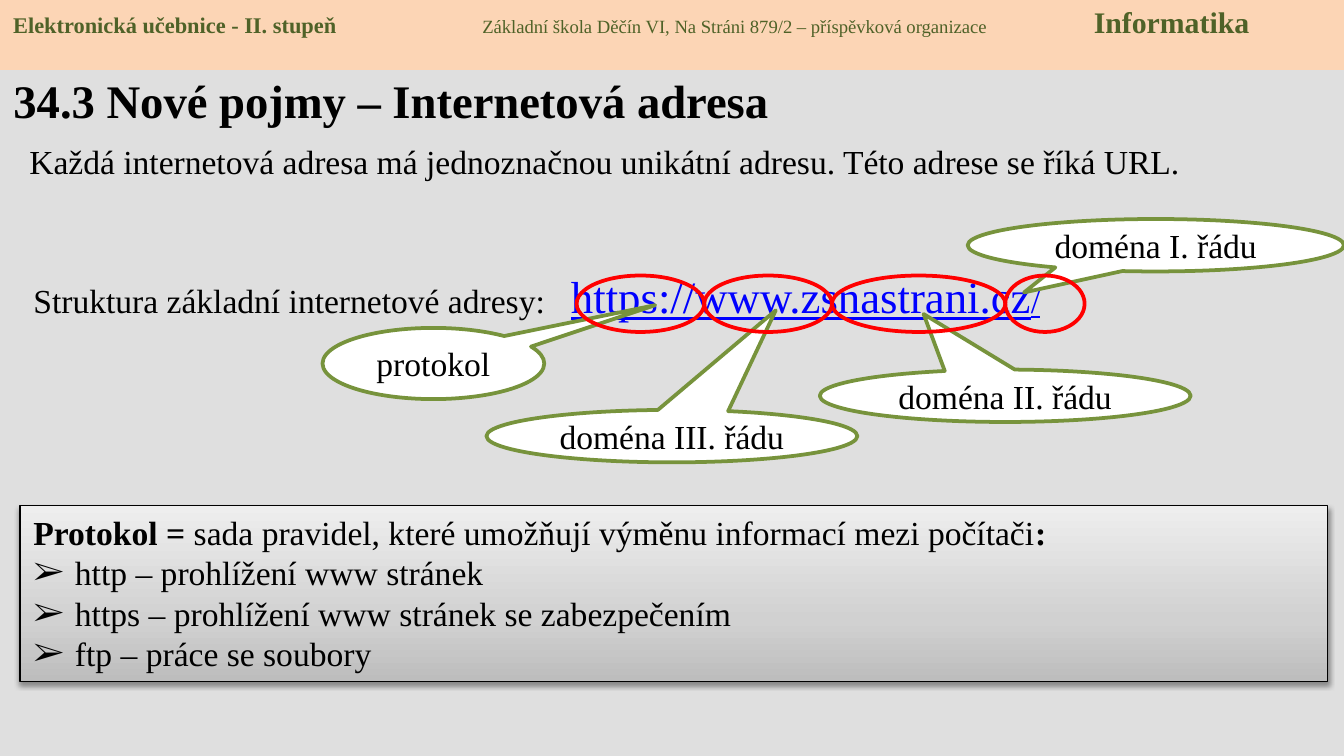
from itertools import accumulate

from lxml.etree import SubElement
from pptx import Presentation
from pptx.dml.color import RGBColor
from pptx.enum.shapes import MSO_SHAPE as Shape
from pptx.enum.text import MSO_ANCHOR as Anchor, MSO_AUTO_SIZE as AutoSize, PP_ALIGN as Align
from pptx.oxml.ns import qn
from pptx.util import Emu, Inches, Pt

FONT = "Times New Roman"
BLACK, WHITE = RGBColor(0, 0, 0), RGBColor(255, 255, 255)
GREY = RGBColor(0xDF, 0xDF, 0xDF)
PEACH = RGBColor(0xFC, 0xD5, 0xB5)
DARK_GREEN = RGBColor(0x4F, 0x62, 0x28)
GREEN = RGBColor(0x77, 0x93, 0x3C)
RED = RGBColor(255, 0, 0)
BLUE = RGBColor(0, 0, 255)
GRADIENT = [(0, RGBColor(0xBD, 0xBD, 0xBD)), (35, RGBColor(0xD1, 0xD1, 0xD1)),
            (100, RGBColor(0xEE, 0xEE, 0xEE))]

# Content: spans are (text, size, bold, colour, underline)
HEADER = [("Elektronická učebnice - II. stupeň\t", 12, True, DARK_GREEN, False),
          ("Základní škola Děčín VI, Na Stráni 879/2 – příspěvková organizace\t",
           10, False, DARK_GREEN, False),
          ("Informatika", 16, True, DARK_GREEN, False)]
TITLE = [("34.3 Nové pojmy – Internetová adresa", 25, True, BLACK, False)]
INTRO = [("Každá internetová adresa má jednoznačnou unikátní adresu. "
          "Této adrese se říká URL.", 18, False, BLACK, False)]
ADDRESS = [("Struktura základní internetové adresy:\t", 18, False, BLACK, False),
           ("https://www.zsnastrani.cz", 24, False, BLUE, True),
           ("/", 18, False, BLUE, True)]
DEFINITION = [("Protokol = ", 18, True, BLACK, False),
              ("sada pravidel, které umožňují výměnu informací mezi počítači",
               18, False, BLACK, False),
              (":", 18, True, BLACK, False)]
PROTOCOLS = ["http – prohlížení www stránek",
             "https – prohlížení www stránek se zabezpečením",
             "ftp – práce se soubory"]
# Callouts: label, (left, top, width, height), pointer offset as shares of the size
CALLOUTS = [("protokol", (2.4, 2.44, 1.65, 0.53), (1, -0.82)),
            ("doména II. řádu", (6.1, 2.75, 2.76, 0.39), (-0.22, -1.56)),
            ("doména III. řádu", (3.62, 3.05, 2.76, 0.39), (0.28, -2.4)),
            ("doména I. řádu", (7.2, 1.63, 2.8, 0.39), (-0.35, 0.9))]
RING_LEFT, RING_TOP, RING_HEIGHT = 4.29, 2.05, 0.42
RING_WIDTHS = [0.95, 0.95, 1.29, 0.59]

deck = Presentation()
deck.slide_width = Inches(10)
deck.slide_height = deck.slide_width * 9 // 16
slide = deck.slides.add_slide(deck.slide_layouts[5])
slide.background.fill.solid()
slide.background.fill.fore_color.rgb = GREY


def write(para, spans):
    para.font.name = FONT
    for text, size, bold, color, underline in spans:
        span = para.add_run()
        span.text = text
        font = span.font
        font.name, font.size, font.bold = FONT, Pt(size), bold
        font.color.rgb = color
        if underline:
            font.underline = True


def set_tabs(para, stops):
    tabs = SubElement(para._p.get_or_add_pPr(), qn("a:tabLst"))
    for stop in stops:
        SubElement(tabs, qn("a:tab"), pos=str(Inches(stop)), algn="l")


def add_shape(kind, place, fill=None, line=None, width=2):
    shape = slide.shapes.add_shape(kind, *map(Inches, place))
    shape.shadow.inherit = False
    if fill is None:
        shape.fill.background()
    else:
        shape.fill.solid()
        shape.fill.fore_color.rgb = fill
    if line is None:
        shape.line.fill.background()
    else:
        shape.line.color.rgb = line
        shape.line.width = Pt(width)
    return shape


def first_para(shape, anchor=Anchor.TOP, align=Align.LEFT):
    frame = shape.text_frame
    frame.word_wrap = True
    frame.auto_size = AutoSize.NONE
    frame.vertical_anchor = anchor
    para = frame.paragraphs[0]
    para.alignment = align
    return para


def add_text(place, spans, stops=()):
    para = first_para(slide.shapes.add_textbox(*map(Inches, place)))
    if stops:
        set_tabs(para, stops)
    write(para, spans)


# Header band
band = add_shape(Shape.RECTANGLE, (0, -0.02, 10, 0.54), PEACH)
para = first_para(band)
set_tabs(para, [3.49, 8.04])
write(para, HEADER)

# Title
title = slide.shapes.title
title.left, title.top, title.width, title.height = map(Inches, (0, 0.37, 9, 0.74))
write(first_para(title, Anchor.MIDDLE), TITLE)

# Introduction and address line
add_text((0.12, 1, 9.76, 0.4), INTRO)
add_text((0.15, 1.95, 8.63, 0.81), ADDRESS, [4])

# Callouts naming the parts of the address
for label, place, pointer in CALLOUTS:
    callout = add_shape(Shape.OVAL_CALLOUT, place, WHITE, GREEN)
    callout.adjustments[0], callout.adjustments[1] = pointer
    write(first_para(callout, Anchor.MIDDLE, Align.CENTER),
          [(label, 18, False, BLACK, False)])

# Rings side by side around the parts of the address
for left, width in zip(accumulate(RING_WIDTHS, initial=RING_LEFT), RING_WIDTHS):
    add_shape(Shape.OVAL, (left, RING_TOP, width, RING_HEIGHT), line=RED)

# Protocol box with three-stop gradient and soft shadow
box = add_shape(Shape.RECTANGLE, (0.15, 3.76, 9.73, 1.31), WHITE, BLACK, 0.75)
box.fill.gradient()
box.fill.gradient_angle = 90
properties = box._element.spPr
stops = properties.find(".//" + qn("a:gsLst"))
stops.clear()
for share, color in GRADIENT:
    stop = SubElement(stops, qn("a:gs"), pos=str(share * 1000))
    SubElement(stop, qn("a:srgbClr"), val=str(color))
shadow = SubElement(properties.find(qn("a:effectLst")), qn("a:outerShdw"),
                    blurRad=str(Pt(3.1)), dist=str(Pt(1.6)), dir="5400000", rotWithShape="0")
shade = SubElement(shadow, qn("a:srgbClr"), val=str(BLACK))
SubElement(shade, qn("a:alpha"), val="38000")

write(first_para(box), DEFINITION)
for protocol in PROTOCOLS:
    para = box.text_frame.add_paragraph()
    para.alignment = Align.LEFT
    indent = para._p.get_or_add_pPr()
    indent.set("marL", str(Inches(0.31)))
    indent.set("indent", str(Emu(-Inches(0.31))))
    SubElement(indent, qn("a:buFont"), typeface=FONT)
    SubElement(indent, qn("a:buChar"), char="➢")
    write(para, [(protocol, 18, False, BLACK, False)])

deck.save("out.pptx")
